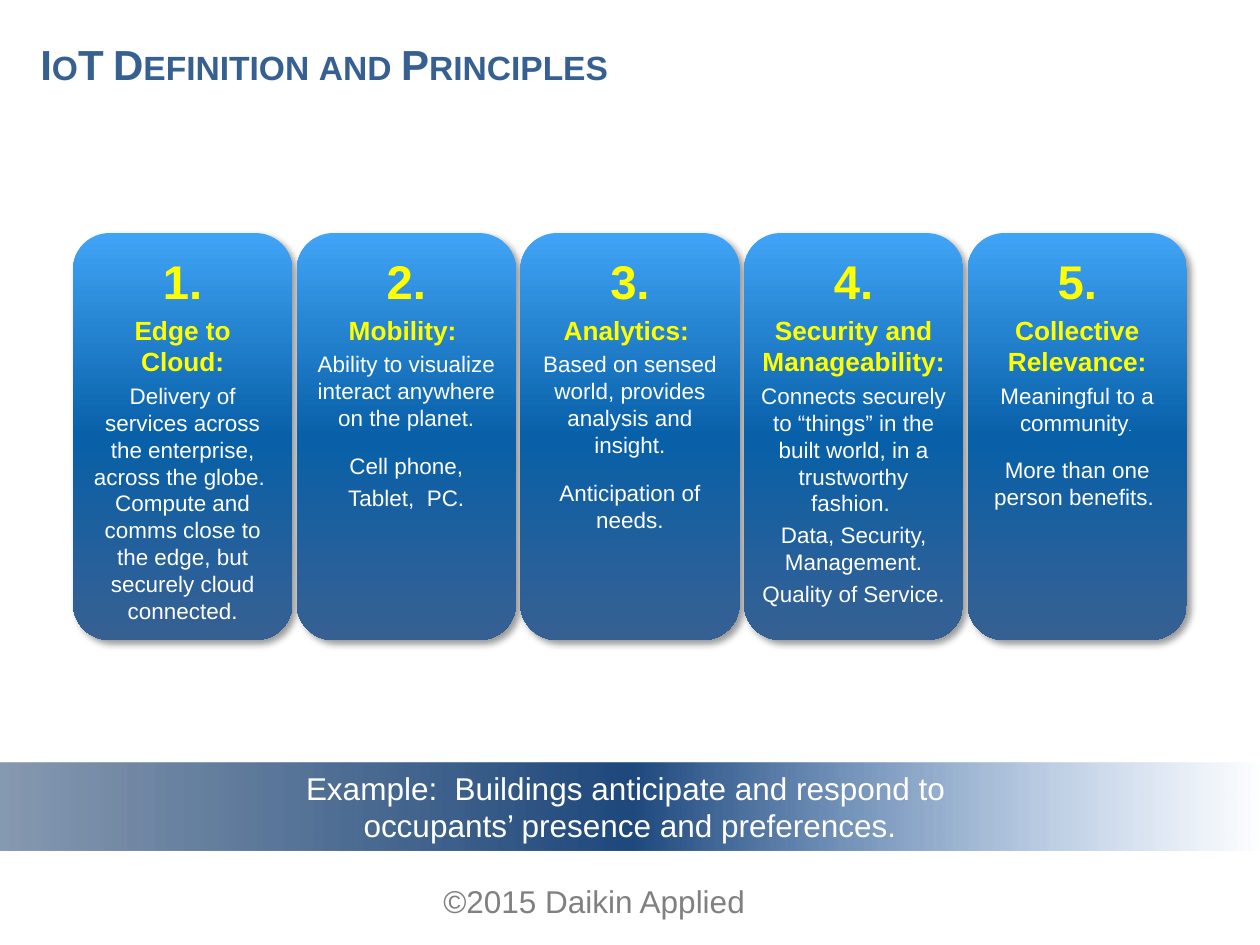
import dataclasses

import lxml.etree
import pptx
import pptx.dml.color
import pptx.enum.shapes
import pptx.enum.text
import pptx.oxml.ns
import pptx.util

Inches = pptx.util.Inches
Pt = pptx.util.Pt
qn = pptx.oxml.ns.qn
ALIGN = pptx.enum.text.PP_ALIGN
ANCHOR = pptx.enum.text.MSO_ANCHOR
SHAPE = pptx.enum.shapes.MSO_SHAPE


@dataclasses.dataclass(frozen=True)
class Theme:
    font: str = "Arial"
    title: str = "376092"
    footer: str = "808080"
    heading: str = "FFFF00"
    body: str = "FFFFFF"
    shadow: str = "000000"
    card_stops: tuple = ((0, "40A4F6", 100), (50, "0860A8", 100), (100, "376092", 100))
    band_stops: tuple = ((0, "2A4C75", 56), (50, "1F497D", 100), (100, "4780C5", 0))
    title_size: float = 24
    number_size: float = 27
    heading_size: float = 15
    body_size: float = 12.8
    period_size: float = 6
    large_size: float = 18
    paragraph_gap: float = 1.4
    block_gap: float = 10.5


CARDS = [
    ("1.", "Edge to Cloud:", [[
        "Delivery of services across the enterprise, across the globe.  "
        "Compute and comms close to the edge, but securely cloud connected."]]),
    ("2.", "Mobility: ", [
        ["Ability to visualize interact anywhere on the planet."],
        ["Cell phone,", "Tablet,  PC."]]),
    ("3.", "Analytics: ", [
        ["Based on sensed world, provides analysis and insight."],
        ["Anticipation of needs."]]),
    ("4.", "Security and Manageability:", [[
        "Connects securely to “things” in the built world, in a trustworthy fashion. ",
        "Data, Security, Management.",
        "Quality of Service."]]),
    ("5.", "Collective Relevance:", [
        ["Meaningful to a community"],
        ["More than one person benefits. "]]),
]
CARD_LEFT, CARD_RIGHT, CARD_TOP = 0.58, 9.42, 1.85
CARD_WIDTH, CARD_HEIGHT = 1.74, 3.23


class SlideBuilder:
    """Holds the theme and the current slide, and adds its elements."""

    def __init__(self, slide, theme):
        self.slide = slide
        self.theme = theme

    def format_run(self, run, size, color, bold=False):
        run.font.name = self.theme.font
        run.font.size = Pt(size)
        run.font.bold = bold
        run.font.color.rgb = pptx.dml.color.RGBColor.from_string(color)

    def format_paragraph(self, paragraph, size, color, bold=False, align=ALIGN.CENTER):
        paragraph.alignment = align
        for run in paragraph.runs:
            self.format_run(run, size, color, bold)

    def add_color(self, parent, color, opacity):
        element = lxml.etree.SubElement(parent, qn("a:srgbClr"), val=color)
        if opacity < 100:
            lxml.etree.SubElement(element, qn("a:alpha"), val=str(opacity * 1000))

    def add_gradient_shape(self, shapes, kind, box, stops, angle):
        shape = shapes.add_shape(kind, *map(Inches, box))
        shape.shadow.inherit = False
        shape.line.fill.background()
        shape.fill.gradient()
        shape.fill.gradient_angle = angle
        stop_list = shape.element.spPr.find(".//" + qn("a:gsLst"))
        for stop in list(stop_list):
            stop_list.remove(stop)
        for position, color, opacity in stops:
            stop = lxml.etree.SubElement(stop_list, qn("a:gs"), pos=str(position * 1000))
            self.add_color(stop, color, opacity)
        return shape

    def add_shadow(self, shape):
        effects = shape.element.spPr.find(qn("a:effectLst"))
        shadow = lxml.etree.SubElement(
            effects, qn("a:outerShdw"), blurRad=str(Pt(4)), dist=str(Pt(3)),
            dir=str(45 * 60000), algn="tl", rotWithShape="0")
        self.add_color(shadow, self.theme.shadow, 40)

    def set_title(self, text, box):
        title = self.slide.shapes.title
        title.left, title.top, title.width, title.height = map(Inches, box)
        frame = title.text_frame
        frame.text = text
        frame.auto_size = pptx.enum.text.MSO_AUTO_SIZE.NONE
        frame.vertical_anchor = ANCHOR.MIDDLE
        paragraph = frame.paragraphs[0]
        self.format_paragraph(
            paragraph, self.theme.title_size, self.theme.title, True, ALIGN.LEFT)
        properties = paragraph._p.get_or_add_pPr()
        properties.set("marL", str(Inches(0.13)))
        properties.set("indent", "0")
        for run in paragraph.runs:
            run.font._element.set("cap", "small")

    def add_footer(self, text, box):
        frame = self.slide.shapes.add_textbox(*map(Inches, box)).text_frame
        frame.word_wrap = True
        frame.text = text
        self.format_paragraph(
            frame.paragraphs[0], self.theme.large_size, self.theme.footer, align=ALIGN.LEFT)

    def add_card(self, shapes, left, number, heading, blocks):
        theme = self.theme
        shape = self.add_gradient_shape(
            shapes, SHAPE.ROUNDED_RECTANGLE, (left, CARD_TOP, CARD_WIDTH, CARD_HEIGHT),
            theme.card_stops, 270)
        self.add_shadow(shape)
        frame = shape.text_frame
        frame.word_wrap = True
        frame.vertical_anchor = ANCHOR.TOP
        frame.margin_left = frame.margin_right = Inches(0.05)
        frame.margin_top, frame.margin_bottom = Inches(0.07), 0
        lines = [(number, theme.number_size, theme.heading, True, 0),
                 (heading, theme.heading_size, theme.heading, True, theme.paragraph_gap)]
        for block_index, block in enumerate(blocks):
            for line_index, text in enumerate(block):
                starts_block = block_index > 0 and line_index == 0
                gap = theme.block_gap if starts_block else theme.paragraph_gap
                lines.append((text, theme.body_size, theme.body, False, gap))
        frame.text = "\n".join(line[0] for line in lines)
        for paragraph, (_, size, color, bold, gap) in zip(frame.paragraphs, lines):
            self.format_paragraph(paragraph, size, color, bold)
            paragraph.space_before = Pt(gap)
            paragraph.space_after = Pt(theme.paragraph_gap)
        return frame

    def add_cards(self, cards):
        group = self.slide.shapes.add_group_shape()
        pitch = (CARD_RIGHT - CARD_LEFT - CARD_WIDTH) / (len(cards) - 1)
        return [self.add_card(group.shapes, CARD_LEFT + index * pitch, *card)
                for index, card in enumerate(cards)]

    def add_small_period(self, paragraph):
        run = paragraph.add_run()
        run.text = ". "
        self.format_run(run, self.theme.period_size, self.theme.body)

    def add_band(self, text, box):
        shape = self.add_gradient_shape(
            self.slide.shapes, SHAPE.RECTANGLE, box, self.theme.band_stops, 0)
        frame = shape.text_frame
        frame.word_wrap = True
        frame.vertical_anchor = ANCHOR.MIDDLE
        frame.text = text
        for paragraph in frame.paragraphs:
            self.format_paragraph(paragraph, self.theme.large_size, self.theme.body)


def main():
    presentation = pptx.Presentation()
    presentation.slide_width, presentation.slide_height = Inches(10), Inches(7.5)
    slide = presentation.slides.add_slide(presentation.slide_layouts[5])
    builder = SlideBuilder(slide, Theme())
    builder.set_title("IoT Definition and Principles", (0.09, 0.02, 9, 0.97))
    builder.add_footer("©2015 Daikin Applied", (3.42, 6.95, 3.17, 0.4))
    frames = builder.add_cards(CARDS)
    builder.add_small_period(frames[-1].paragraphs[2])
    builder.add_band(
        "Example:  Buildings anticipate and respond to \n"
        "occupants’ presence and preferences.", (0, 6.05, 10, 0.7))
    presentation.save("out.pptx")


if __name__ == "__main__":
    main()
